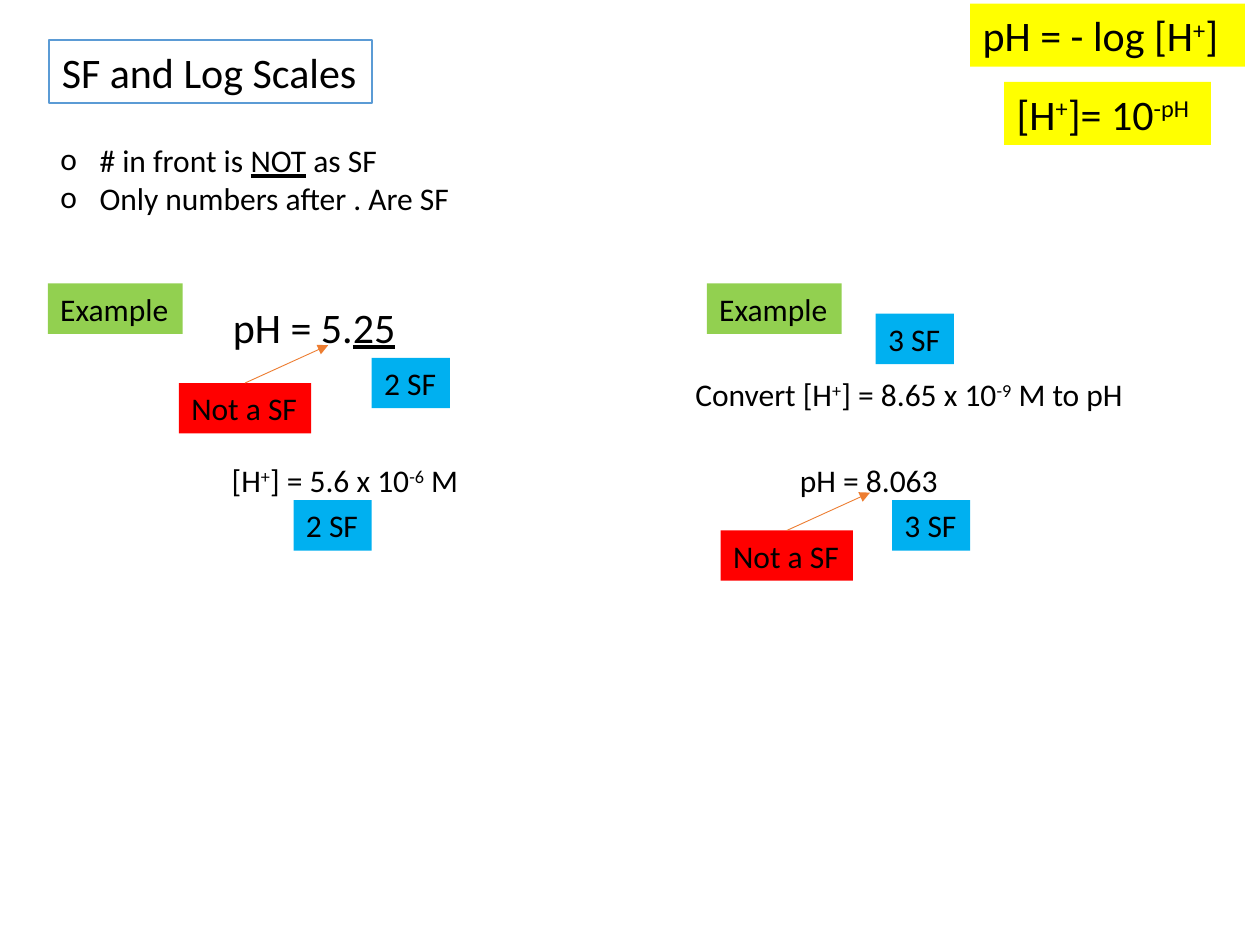
from dataclasses import dataclass
from typing import Optional

from lxml import etree
from pptx import Presentation
from pptx.dml.color import RGBColor
from pptx.enum.shapes import MSO_CONNECTOR, MSO_SHAPE
from pptx.enum.text import MSO_ANCHOR, MSO_AUTO_SIZE, PP_ALIGN
from pptx.oxml.ns import qn
from pptx.util import Inches, Pt

RECTANGLE, STRAIGHT = MSO_SHAPE.RECTANGLE, MSO_CONNECTOR.STRAIGHT
TOP, LEFT, NO_FIT = MSO_ANCHOR.TOP, PP_ALIGN.LEFT, MSO_AUTO_SIZE.NONE
TOP_SIDE = 0

# The slide is a grid of 100 columns by 75 rows of square units
UNIT = Inches(0.1)
COLUMNS, ROWS = 100, 75


@dataclass(frozen=True)
class Theme:
    font: str = "Calibri"
    text: str = "000000"
    paper: str = "FFFFFF"
    outline: str = "5B9BD5"
    arrow: str = "ED7D31"
    formula: str = "FFFF00"
    example: str = "92D050"
    counted: str = "00B0F0"
    rejected: str = "FF0000"
    large: int = 24
    normal: int = 18


THEME = Theme()


@dataclass(frozen=True)
class Style:
    """Fill and type size of a kind of label."""
    fill: Optional[str]
    size: int = THEME.normal

    @property
    def rows(self) -> float:
        return 5 if self.size == THEME.large else 4


@dataclass(frozen=True)
class Label:
    """Text between bars is raised, or underlined if so marked."""
    text: str
    style: Style
    column: float
    row: float
    columns: float
    underlined: bool = False


FORMULA = Style(THEME.formula, THEME.large)
EXAMPLE = Style(THEME.example)
COUNTED = Style(THEME.counted)
REJECTED = Style(THEME.rejected)
PLAIN = Style(None)
PLAIN_LARGE = Style(None, THEME.large)

LABELS = [
    # Formulas
    Label("pH = - log [H|+|]", FORMULA, 77, 0.3, 21.8),
    Label("[H|+|]= 10|-pH|", FORMULA, 79.7, 6.5, 16.4),
    # Left example
    Label("Example", EXAMPLE, 3.8, 22.5, 10.7),
    Label("pH = 5.|25|", PLAIN_LARGE, 17.5, 23.4, 15, True),
    Label("2 SF", COUNTED, 29.5, 28.4, 6.2),
    Label("[H|+|] = 5.6 x 10|-6| M", PLAIN, 17.4, 36.1, 20.5),
    Label("2 SF", COUNTED, 23.3, 39.7, 6.2),
    # Right example
    Label("Example", EXAMPLE, 56.1, 22.5, 10.7),
    Label("3 SF", COUNTED, 69.5, 24.9, 6.2),
    Label("Convert [H|+|] = 8.65 x 10|-9| M to pH", PLAIN, 54.2, 29.3, 36.6),
    Label("pH = 8.063", PLAIN, 62.5, 36.1, 13.1),
    Label("3 SF", COUNTED, 70.8, 39.7, 6.2),
]
WARNINGS = [
    Label("Not a SF", REJECTED, 14.2, 30.4, 10.5),
    Label("Not a SF", REJECTED, 57.2, 42.1, 10.5),
]
ARROW_COLUMNS, ARROW_ROWS = 6.6, -3


def units(count: float) -> int:
    return round(count * UNIT)


def color(value: str) -> RGBColor:
    return RGBColor.from_string(value)


def apply(target, values: dict) -> None:
    for name, value in values.items():
        setattr(target, name, value)


def place(shape, column: float, row: float, columns: float, rows: float) -> None:
    apply(shape, {"left": units(column), "top": units(row),
                  "width": units(columns), "height": units(rows)})


def write(paragraph, text: str, size: int, underlined: bool = False) -> None:
    paragraph.alignment = LEFT
    for index, part in enumerate(text.split("|")):
        if not part:
            continue
        run = paragraph.add_run()
        run.text = part
        apply(run.font, {"name": THEME.font, "size": Pt(size)})
        run.font.color.rgb = color(THEME.text)
        if index % 2 and underlined:
            run.font.underline = True
        elif index % 2:
            run._r.get_or_add_rPr().set("baseline", "30000")


def set_frame(frame) -> None:
    # No right margin, so that lines of exact width stay whole
    apply(frame, {"word_wrap": True, "auto_size": NO_FIT, "vertical_anchor": TOP,
                  "margin_left": Inches(0.1), "margin_right": 0,
                  "margin_top": Inches(0.05), "margin_bottom": Inches(0.05)})


def draw_label(slide, label: Label):
    box = (units(label.column), units(label.row),
           units(label.columns), units(label.style.rows))
    if label.style.fill:
        shape = slide.shapes.add_shape(RECTANGLE, *box)
        shape.shadow.inherit = False
        shape.fill.solid()
        shape.fill.fore_color.rgb = color(label.style.fill)
        shape.line.fill.background()
    else:
        shape = slide.shapes.add_textbox(*box)
    set_frame(shape.text_frame)
    write(shape.text_frame.paragraphs[0], label.text, label.style.size,
          label.underlined)
    return shape


def draw_arrow(slide, start) -> None:
    x, y = start.left + start.width // 2, start.top
    arrow = slide.shapes.add_connector(
        STRAIGHT, x, y, x + units(ARROW_COLUMNS), y + units(ARROW_ROWS))
    arrow.begin_connect(start, TOP_SIDE)
    arrow.line.width = Pt(0.5)
    arrow.line.color.rgb = color(THEME.arrow)
    etree.SubElement(arrow.line._get_or_add_ln(), qn("a:tailEnd"), type="triangle")
    etree.SubElement(arrow._element.spPr, qn("a:effectLst"))


def draw_title(title, text: str) -> None:
    place(title, 3.9, 3.2, 25.6, 5)
    title.fill.solid()
    title.fill.fore_color.rgb = color(THEME.paper)
    title.line.color.rgb = color(THEME.outline)
    title.line.width = Pt(1)
    set_frame(title.text_frame)
    write(title.text_frame.paragraphs[0], text, THEME.large)


def draw_rules(body, rules: list[str]) -> None:
    place(body, 3.8, 10.7, 33.3, 7.1)
    frame = body.text_frame
    set_frame(frame)
    for index, rule in enumerate(rules):
        paragraph = frame.add_paragraph() if index else frame.paragraphs[0]
        write(paragraph, rule, THEME.normal, underlined=True)
        paragraph.space_before = Pt(0)
        properties = paragraph._p.get_or_add_pPr()
        properties.set("marL", str(Inches(0.31)))
        properties.set("indent", str(-Inches(0.31)))
        etree.SubElement(properties, qn("a:buFont"), typeface=THEME.font)
        etree.SubElement(properties, qn("a:buChar"), char="o")


def main() -> None:
    presentation = Presentation()
    presentation.slide_width = units(COLUMNS)
    presentation.slide_height = units(ROWS)
    slide = presentation.slides.add_slide(presentation.slide_layouts[1])

    draw_title(slide.shapes.title, "SF and Log Scales")
    draw_rules(slide.placeholders[1],
               ["# in front is |NOT| as SF", "Only numbers after . Are SF"])
    for label in LABELS:
        draw_label(slide, label)
    for warning in WARNINGS:
        draw_arrow(slide, draw_label(slide, warning))
    presentation.save("out.pptx")


if __name__ == "__main__":
    main()
